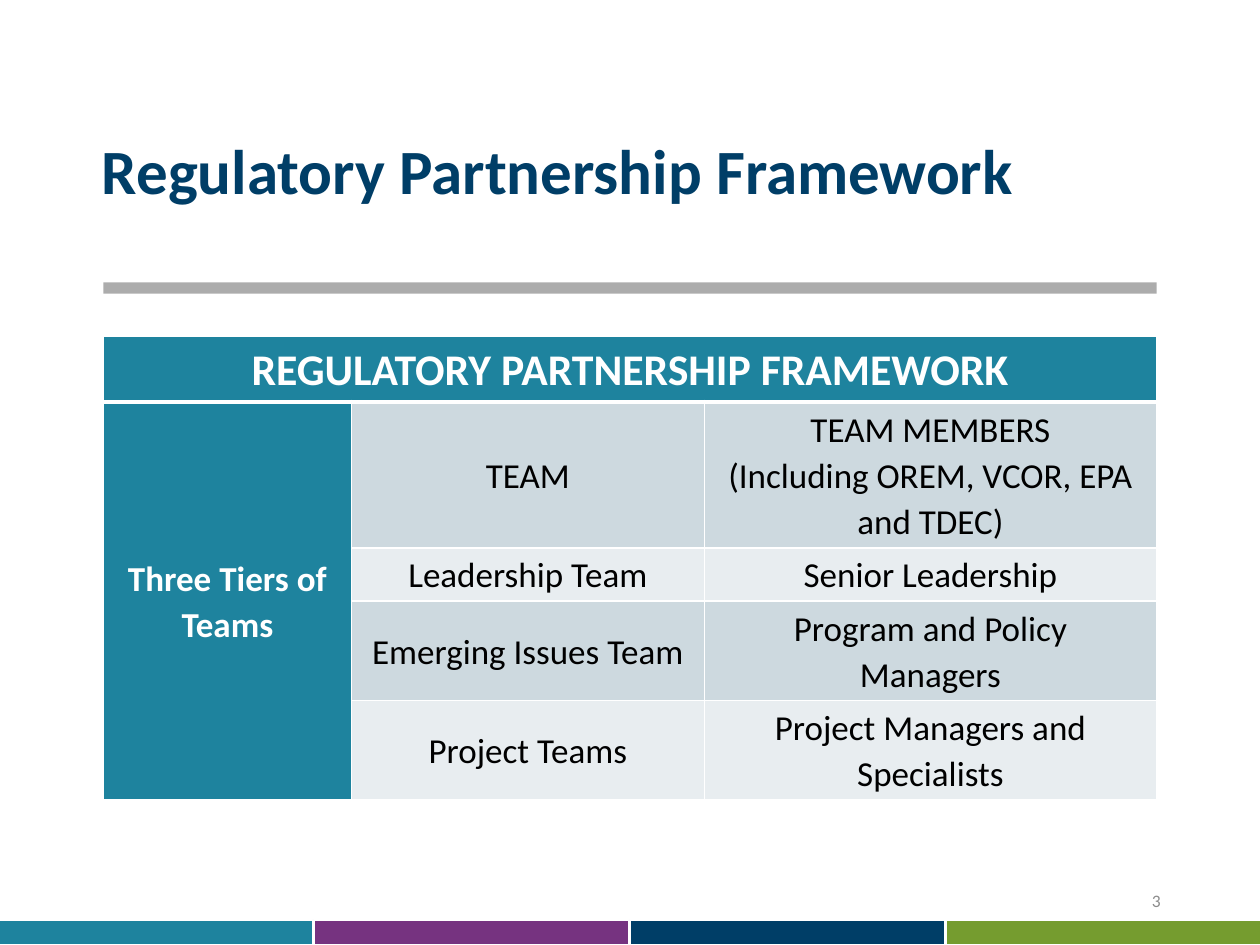
from lxml import etree
from pptx import Presentation
from pptx.dml.color import RGBColor
from pptx.enum.shapes import MSO_SHAPE
from pptx.enum.text import MSO_ANCHOR, PP_ALIGN
from pptx.oxml.ns import qn
from pptx.util import Inches, Pt

RECT = MSO_SHAPE.RECTANGLE
MIDDLE = MSO_ANCHOR.MIDDLE
LEFT, CENTER, RIGHT = PP_ALIGN.LEFT, PP_ALIGN.CENTER, PP_ALIGN.RIGHT
TEAL, PURPLE, NAVY, GREEN = "1E839E", "763380", "003E67", "759C2F"
WHITE, BLACK, GRAY = "FFFFFF", "000000", "8C8C8C"
BANDS = ["CDD9DF", "E8EDF0"]


def paint(target, color):
    target.solid()
    target.fore_color.rgb = RGBColor.from_string(color)


class Deck:
    font = "Calibri"

    def __init__(self, slide):
        self.slide = slide

    def label(self, frame, text, size, color, bold=False, align=LEFT, lead=None, after=None):
        frame.text = text
        for para in frame.paragraphs:
            para.alignment = align
            if lead:
                para.line_spacing = lead
            if after is not None:
                para.space_after = Pt(after)
            para.font.name = self.font
            para.font.size = Pt(size)
            para.font.bold = bold
            paint(para.font.fill, color)

    def text(self, box, text, size, color, **style):
        frame = self.slide.shapes.add_textbox(*map(Inches, box)).text_frame
        frame.word_wrap = True
        frame.vertical_anchor = MIDDLE
        self.label(frame, text, size, color, **style)

    def bar(self, box, color, edge=None, alpha=None):
        bar = self.slide.shapes.add_shape(RECT, *map(Inches, box))
        bar.shadow.inherit = False
        paint(bar.fill, color)
        if alpha:
            tone = bar.element.spPr.find(".//" + qn("a:srgbClr"))
            etree.SubElement(tone, qn("a:alpha"), val=str(alpha * 1000))
        if edge:
            paint(bar.line.fill, edge)
            bar.line.width = Pt(1)
        else:
            bar.line.fill.background()

    def table(self, box, cols, rows):
        shape = self.slide.shapes.add_table(len(rows), len(cols), *map(Inches, box))
        grid = shape.table
        for col, width in zip(grid.columns, cols):
            col.width = Inches(width)
        for row, height in zip(grid.rows, rows):
            row.height = Inches(height)
        return grid

    def cell(self, cell, text, size, fill, color, bold=False):
        cell.margin_left = cell.margin_right = Inches(0.13)
        cell.margin_top = cell.margin_bottom = 0
        cell.vertical_anchor = MIDDLE
        paint(cell.fill, fill)
        self.label(cell.text_frame, text, size, color, bold, CENTER, 1.07)

    def edges(self, cell, top=1, bottom=1):
        props = cell._tc.get_or_add_tcPr()
        widths = {"a:lnL": 1, "a:lnR": 1, "a:lnT": top, "a:lnB": bottom}
        for i, (tag, width) in enumerate(widths.items()):
            line = etree.Element(qn(tag), w=str(Pt(width)))
            fill = etree.SubElement(line, qn("a:solidFill"))
            etree.SubElement(fill, qn("a:srgbClr"), val=WHITE)
            props.insert(i, line)


def main():
    prs = Presentation()
    prs.slide_width, prs.slide_height = Inches(10), Inches(7.5)
    deck = Deck(prs.slides.add_slide(prs.slide_layouts[6]))

    # Footer stripe
    for i, color in enumerate([TEAL, PURPLE, NAVY, GREEN]):
        deck.bar((-0.02 + 2.51 * i, 7.3, 2.5, 0.2), color, edge=WHITE)

    # Title and rule
    deck.text((0.71, 0.66, 8.57, 1.45), "Regulatory Partnership Framework",
              36, NAVY, bold=True, lead=0.9)
    deck.bar((0.82, 2.24, 8.36, 0.09), "808080", alpha=65)

    # Page number
    deck.text((7.06, 6.95, 2.25, 0.4), "3", 10, GRAY, align=RIGHT, after=6)

    # Table of teams
    teams = [
        ("TEAM", "TEAM MEMBERS\n(Including OREM, VCOR, EPA and TDEC)"),
        ("Leadership Team", "Senior Leadership"),
        ("Emerging Issues Team", "Program and Policy Managers"),
        ("Project Teams", "Project Managers and Specialists"),
    ]
    grid = deck.table((0.82, 2.67, 8.36, 3.67), [1.97, 2.8, 3.59],
                      [0.52, 1.16, 0.42, 0.79, 0.79])
    grid.cell(0, 0).merge(grid.cell(0, 2))
    grid.cell(1, 0).merge(grid.cell(4, 0))
    deck.cell(grid.cell(0, 0), "REGULATORY PARTNERSHIP FRAMEWORK", 25, TEAL, WHITE, True)
    deck.cell(grid.cell(1, 0), "Three Tiers of Teams", 20, TEAL, WHITE, True)
    for r, team in enumerate(teams, 1):
        for c, text in enumerate(team, 1):
            deck.cell(grid.cell(r, c), text, 20, BANDS[(r - 1) % 2], BLACK)

    # Cell borders, heavier under the heading
    for r in range(len(grid.rows)):
        for c in range(len(grid.columns)):
            deck.edges(grid.cell(r, c), top=3 if r == 1 else 1, bottom=3 if r == 0 else 1)

    prs.save("out.pptx")


if __name__ == "__main__":
    main()
